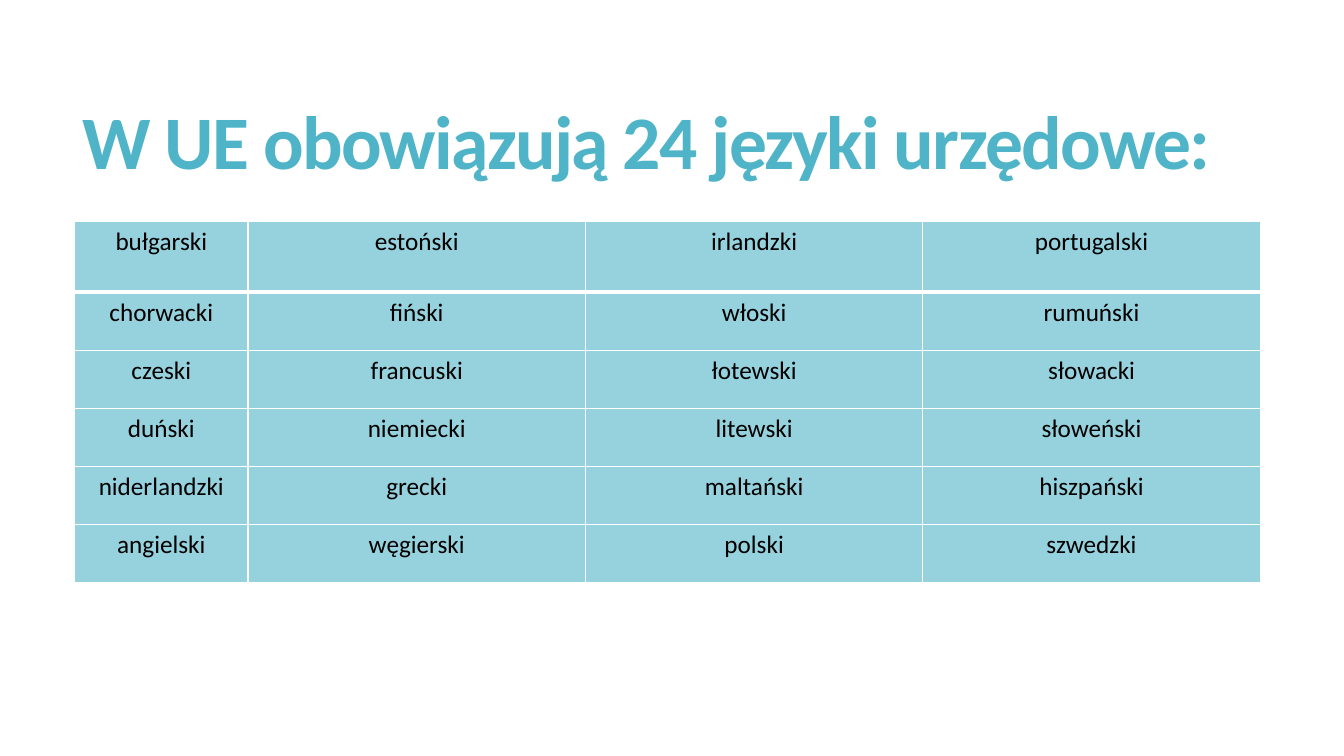
"""Build a slide with a table of the official languages of the EU."""
from dataclasses import dataclass

from lxml import etree
from pptx import Presentation
from pptx.dml.color import RGBColor
from pptx.enum.text import MSO_ANCHOR, PP_ALIGN
from pptx.oxml.ns import qn
from pptx.util import Inches, Pt

CENTER, LEFT = PP_ALIGN.CENTER, PP_ALIGN.LEFT
TOP, MIDDLE = MSO_ANCHOR.TOP, MSO_ANCHOR.MIDDLE

TITLE = "W UE obowiązują 24 języki urzędowe:"
LANGUAGES = [
    ("bułgarski", "estoński", "irlandzki", "portugalski"),
    ("chorwacki", "fiński", "włoski", "rumuński"),
    ("czeski", "francuski", "łotewski", "słowacki"),
    ("duński", "niemiecki", "litewski", "słoweński"),
    ("niderlandzki", "grecki", "maltański", "hiszpański"),
    ("angielski", "węgierski", "polski", "szwedzki"),
]

SLIDE_SIZE = (13.33, 7.5)
TITLE_BOX = (0.72, 0.55, 11.78, 1.81)
TABLE_BOX = (0.74, 2.2, 11.76, 3.58)
FIRST_COLUMN = 1.72
FIRST_ROW = 0.7


@dataclass(frozen=True)
class Theme:
    """Colours, font and sizes."""
    font: str = "Calibri"
    title_color: str = "50B4C8"
    text_color: str = "000000"
    cell_color: str = "96D2DE"
    border_color: str = "FFFFFF"
    title_size: float = 54
    title_spacing: float = -1.2
    text_size: float = 18
    thin: float = 1
    thick: float = 3


THEME = Theme()


def add_span(para, text, size, color, bold=False):
    """Add one formatted run to a paragraph."""
    span = para.add_run()
    span.text = text
    span.font.name = THEME.font
    span.font.size = Pt(size)
    span.font.bold = bold
    span.font.color.rgb = RGBColor.from_string(color)
    return span


def set_borders(cell, top, bottom):
    """Draw the four borders of a cell, given the top and bottom widths."""
    properties = cell._tc.get_or_add_tcPr()
    widths = {"lnL": THEME.thin, "lnR": THEME.thin, "lnT": top, "lnB": bottom}
    for index, (side, width) in enumerate(widths.items()):
        line = etree.Element(qn(f"a:{side}"), w=str(Pt(width)))
        fill = etree.SubElement(line, qn("a:solidFill"))
        etree.SubElement(fill, qn("a:srgbClr"), val=THEME.border_color)
        properties.insert(index, line)


def add_title(page):
    """Place and format the title."""
    title = page.shapes.title
    title.left, title.top, title.width, title.height = map(Inches, TITLE_BOX)
    frame = title.text_frame
    frame.word_wrap = True
    frame.vertical_anchor = MIDDLE
    para = frame.paragraphs[0]
    para.alignment = LEFT
    para.line_spacing = 0.85
    span = add_span(para, TITLE, THEME.title_size, THEME.title_color, True)
    span.font._element.set("spc", str(round(THEME.title_spacing * 100)))


def add_languages(page):
    """Add the language table with a narrow first column and a tall first row."""
    row_count, column_count = len(LANGUAGES), len(LANGUAGES[0])
    box = map(Inches, TABLE_BOX)
    table = page.shapes.add_table(row_count, column_count, *box).table
    table.horz_banding = False
    width, height = TABLE_BOX[2:]
    other_column = (width - FIRST_COLUMN) / (column_count - 1)
    other_row = (height - FIRST_ROW) / (row_count - 1)
    for index, column in enumerate(table.columns):
        column.width = Inches(other_column if index else FIRST_COLUMN)
    for index, row in enumerate(table.rows):
        row.height = Inches(other_row if index else FIRST_ROW)
        top = THEME.thick if index == 1 else THEME.thin
        bottom = THEME.thick if index == 0 else THEME.thin
        for cell, language in zip(row.cells, LANGUAGES[index]):
            cell.fill.solid()
            cell.fill.fore_color.rgb = RGBColor.from_string(THEME.cell_color)
            cell.vertical_anchor = TOP
            para = cell.text_frame.paragraphs[0]
            para.alignment = CENTER
            add_span(para, language, THEME.text_size, THEME.text_color)
            set_borders(cell, top, bottom)


def main():
    """Build and save the deck."""
    deck = Presentation()
    deck.slide_width, deck.slide_height = map(Inches, SLIDE_SIZE)
    page = deck.slides.add_slide(deck.slide_layouts[5])
    add_title(page)
    add_languages(page)
    deck.save("out.pptx")


if __name__ == "__main__":
    main()
